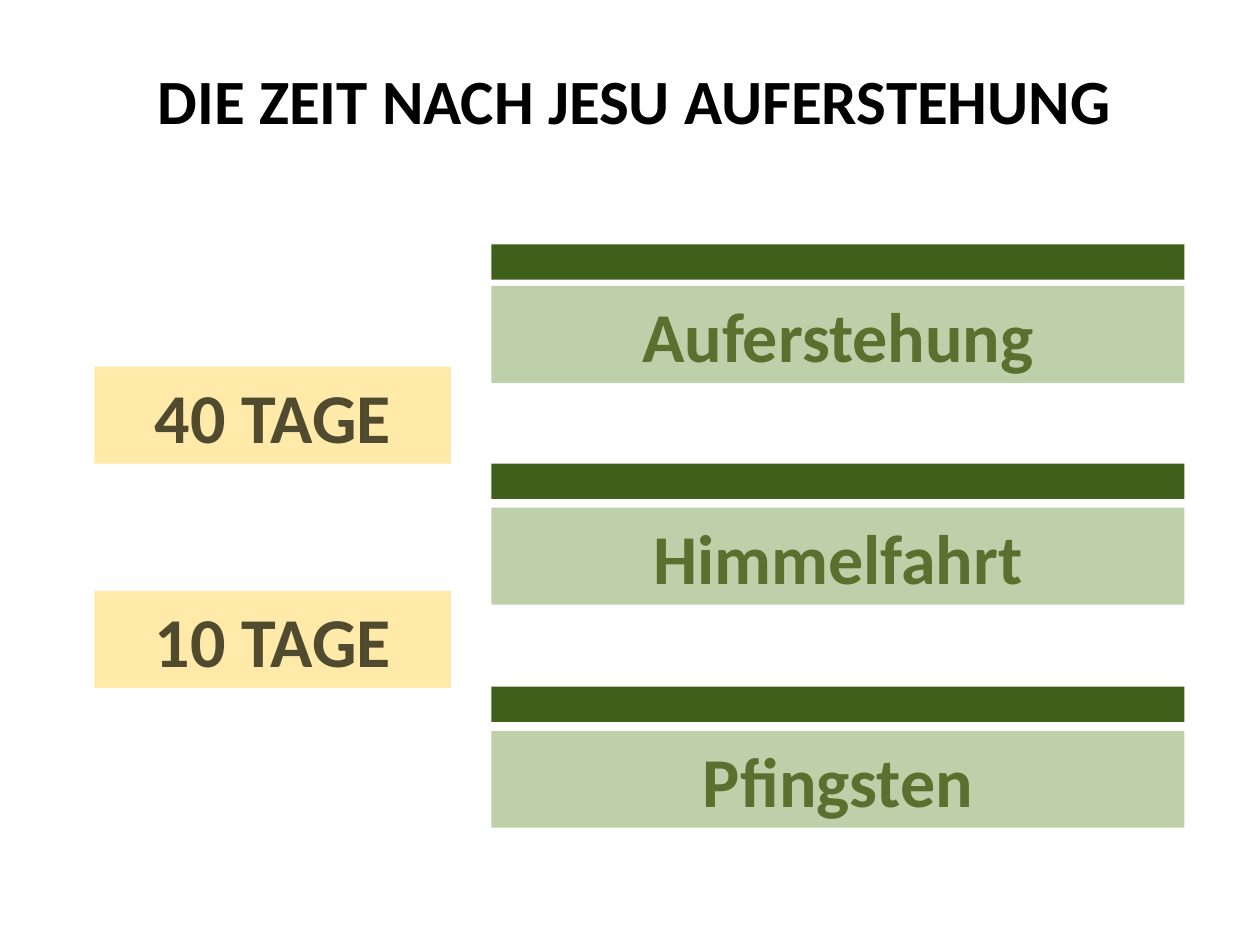
"""Build the slide on the days between Easter, Ascension and Pentecost."""
from dataclasses import dataclass

from lxml import etree
from pptx import Presentation
from pptx.dml.color import RGBColor
from pptx.enum.shapes import MSO_SHAPE
from pptx.enum.text import MSO_ANCHOR, MSO_AUTO_SIZE, PP_ALIGN
from pptx.oxml.ns import qn
from pptx.util import Inches, Pt

RECT = MSO_SHAPE.RECTANGLE
TOP, MIDDLE = MSO_ANCHOR.TOP, MSO_ANCHOR.MIDDLE
GROW = MSO_AUTO_SIZE.SHAPE_TO_FIT_TEXT
CENTER = PP_ALIGN.CENTER
COLS, ROWS = 100, 75


@dataclass(frozen=True)
class Theme:
    font: str = "Calibri"
    head: int = 36
    label: int = 40
    black: str = "000000"
    white: str = "FFFFFF"
    bar: str = "3F601A"
    leaf: str = "588824"
    moss: str = "5A702E"
    sand: str = "FFD85D"
    earth: str = "504A2E"


class Page:
    def __init__(self, deck, theme):
        self.theme = theme
        self.slide = deck.slides.add_slide(deck.slide_layouts[6])
        self.col = deck.slide_width / COLS
        self.row = deck.slide_height / ROWS

    def block(self, left, top, width, height, color, alpha=100):
        shape = self.slide.shapes.add_shape(
            RECT, round(left * self.col), round(top * self.row),
            round(width * self.col), round(height * self.row))
        shape.shadow.inherit = False
        shape.line.fill.background()
        shape.fill.solid()
        shape.fill.fore_color.rgb = RGBColor.from_string(color)
        if alpha < 100:
            tone = next(shape.element.spPr.iter(qn("a:srgbClr")))
            etree.SubElement(tone, qn("a:alpha")).set("val", str(alpha * 1000))
        return shape

    def letter(self, shape, text, size, color, anchor=MIDDLE):
        frame = shape.text_frame
        frame.word_wrap = True
        frame.vertical_anchor = anchor
        para = frame.paragraphs[0]
        para.alignment = CENTER
        run = para.add_run()
        run.text = text
        font = run.font
        font.name, font.size, font.bold = self.theme.font, Pt(size), True
        font.color.rgb = RGBColor.from_string(color)

    def title(self, text):
        look = self.theme
        shape = self.block(4.3, 4.4, 92.1, 6.7, look.white, 60)
        self.letter(shape, text, look.head, look.black, TOP)

    def label(self, left, top, width, text, fill, alpha, ink):
        shape = self.block(left, top, width, 7.7, fill, alpha)
        self.letter(shape, text, self.theme.label, ink)
        shape.text_frame.auto_size = GROW

    def feast(self, text, bar, top):
        look = self.theme
        self.block(39, bar, 55, 2.8, look.bar)
        self.label(39, top, 55, text, look.leaf, 39, look.moss)

    def span(self, text, top):
        look = self.theme
        self.label(7.5, top, 28.3, text, look.sand, 53, look.earth)


def main():
    deck = Presentation()
    deck.slide_width, deck.slide_height = Inches(10), Inches(7.5)
    page = Page(deck, Theme())
    page.title("DIE ZEIT NACH JESU AUFERSTEHUNG")
    for text, bar, top in (("Auferstehung", 19.4, 22.7),
                           ("Himmelfahrt", 36.8, 40.3),
                           ("Pfingsten", 54.5, 58)):
        page.feast(text, bar, top)
    for text, top in (("40 TAGE", 29.1), ("10 TAGE", 46.9)):
        page.span(text, top)
    deck.save("out.pptx")


if __name__ == "__main__":
    main()
